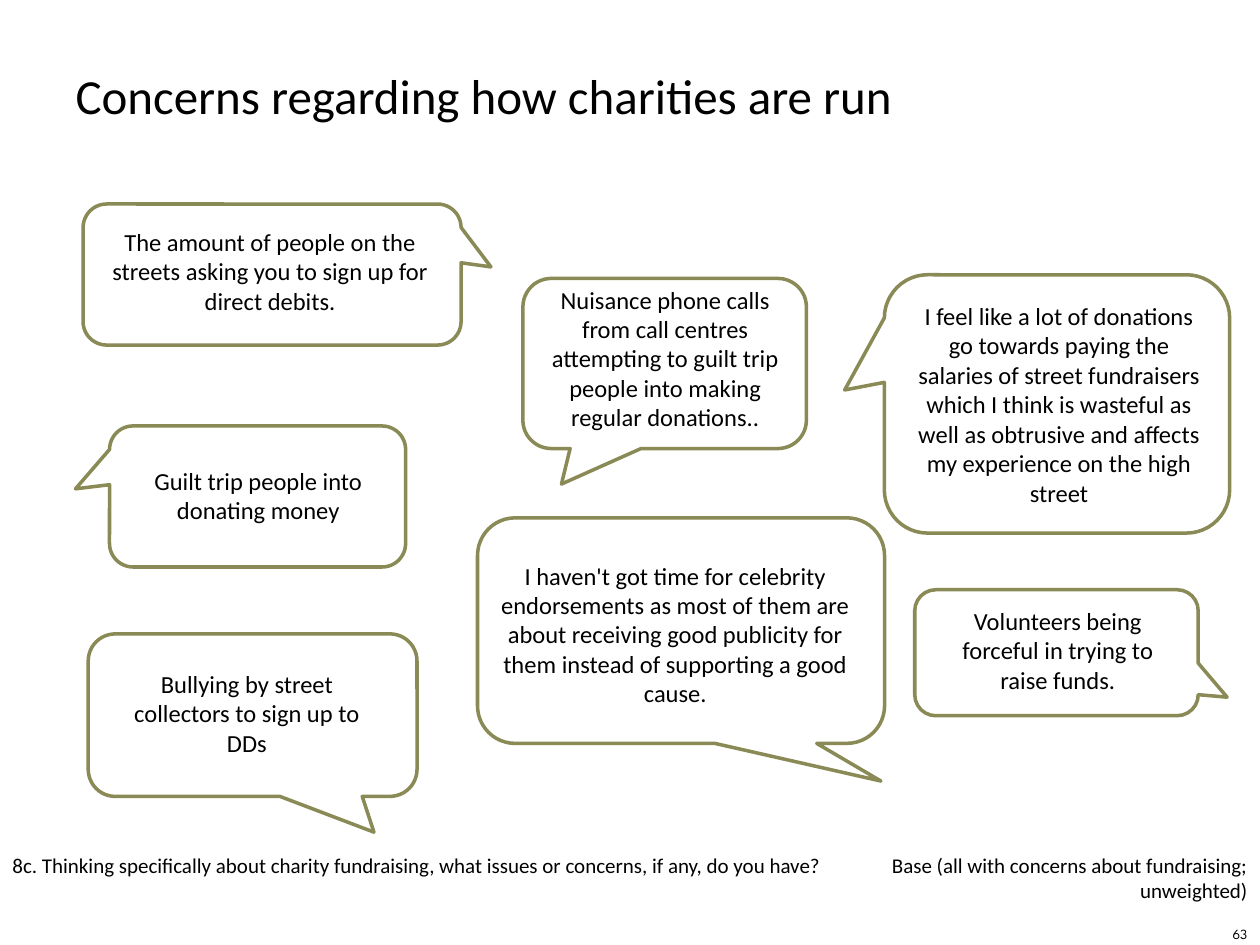
from dataclasses import dataclass
from typing import NamedTuple

from pptx import Presentation
from pptx.dml.color import RGBColor
from pptx.enum import shapes, text
from pptx.util import Pt


@dataclass(frozen=True)
class Theme:
    ink: RGBColor = RGBColor(0x00, 0x00, 0x00)
    outline: RGBColor = RGBColor(0x89, 0x8A, 0x56)
    outline_width: float = 2
    font: str = "Calibri"
    number_font: str = "League Spartan"
    title_size: float = 28
    quote_size: float = 14
    note_size: float = 12
    number_size: float = 8


class Box(NamedTuple):
    left: float
    top: float
    width: float
    height: float


@dataclass(frozen=True)
class Quote:
    words: str
    bubble: Box
    tail: tuple[float, float]
    label: Box


THEME = Theme()
CORNER = 0.167

QUOTES = [
    Quote("The amount of people on the streets asking you to sign up for direct debits.",
          Box(47.5, 116.6, 216, 80.6), (0.579, -0.054), Box(51.1, 126, 206.6, 58.3)),
    Quote("Bullying by street collectors to sign up to DDs",
          Box(50.4, 362.2, 187.9, 92.9), (0.369, 0.72), Box(59, 378.7, 164.2, 58.3)),
    Quote("I haven't got time for celebrity endorsements as most of them are about receiving "
          "good publicity for them instead of supporting a good cause.",
          Box(272.9, 295.9, 232.6, 128.9), (0.491, 0.667), Box(277.9, 316.8, 216, 92.2)),
    Quote("Guilt trip people into donating money",
          Box(62.6, 243.4, 169.2, 80.6), (-0.615, -0.054), Box(69.1, 262.8, 157, 41)),
    Quote("I feel like a lot of donations go towards paying the salaries of street fundraisers "
          "which I think is wasteful as well as obtrusive and affects my experience on the "
          "high street",
          Box(505.4, 157, 197.3, 147.6), (-0.615, -0.054), Box(515.5, 168.5, 179.3, 126)),
    Quote("Nuisance phone calls from call centres attempting to guilt trip people into making "
          "regular donations..",
          Box(298.8, 159.1, 162, 97.2), (-0.364, 0.709), Box(306.7, 159.1, 146.9, 92.2)),
    Quote("Volunteers being forceful in trying to raise funds.",
          Box(522.7, 337, 162, 72), (0.602, 0.353), Box(531.4, 342.7, 146.2, 58.3)),
]


def in_points(box: Box) -> list[Pt]:
    return [Pt(length) for length in box]


def write(shape, words: str, *, size: float, font: str = THEME.font,
          align=text.PP_ALIGN.LEFT, anchor=text.MSO_ANCHOR.TOP) -> None:
    frame = shape.text_frame
    frame.word_wrap = True
    frame.auto_size = text.MSO_AUTO_SIZE.NONE
    frame.vertical_anchor = anchor
    paragraph = frame.paragraphs[0]
    paragraph.alignment = align
    run = paragraph.add_run()
    run.text = words
    run.font.name = font
    run.font.size = Pt(size)
    run.font.color.rgb = THEME.ink


def add_label(slide, box: Box, words: str, **formatting) -> None:
    write(slide.shapes.add_textbox(*in_points(box)), words, **formatting)


def add_bubble(slide, quote: Quote) -> None:
    bubble = slide.shapes.add_shape(
        shapes.MSO_SHAPE.ROUNDED_RECTANGULAR_CALLOUT, *in_points(quote.bubble))
    for index, value in enumerate((*quote.tail, CORNER)):
        bubble.adjustments[index] = value
    bubble.shadow.inherit = False
    bubble.fill.background()
    bubble.line.color.rgb = THEME.outline
    bubble.line.width = Pt(THEME.outline_width)


def add_title(slide, box: Box, words: str) -> None:
    title = slide.shapes.title
    title.left, title.top, title.width, title.height = in_points(box)
    write(title, words, size=THEME.title_size, align=text.PP_ALIGN.JUSTIFY,
          anchor=text.MSO_ANCHOR.MIDDLE)


def main() -> None:
    presentation = Presentation()
    presentation.slide_width, presentation.slide_height = Pt(720), Pt(540)
    slide = presentation.slides.add_slide(presentation.slide_layouts.get_by_name("Title Only"))

    add_title(slide, Box(36, 9.4, 526.3, 90), "Concerns regarding how charities are run")
    for quote in QUOTES:
        add_bubble(slide, quote)
    for quote in QUOTES:
        add_label(slide, quote.label, quote.words, size=THEME.quote_size,
                  align=text.PP_ALIGN.CENTER)

    add_label(slide, Box(0, 483.8, 510.5, 21.6),
              "8c. Thinking specifically about charity fundraising, what issues or concerns, "
              "if any, do you have?", size=THEME.note_size)
    add_label(slide, Box(479.5, 483.8, 240.5, 36),
              "Base (all with concerns about fundraising; unweighted)",
              size=THEME.note_size, align=text.PP_ALIGN.RIGHT)
    add_label(slide, Box(552.2, 519.1, 167.8, 28.8), "63", size=THEME.number_size,
              font=THEME.number_font, align=text.PP_ALIGN.RIGHT,
              anchor=text.MSO_ANCHOR.MIDDLE)

    presentation.save("out.pptx")


if __name__ == "__main__":
    main()
